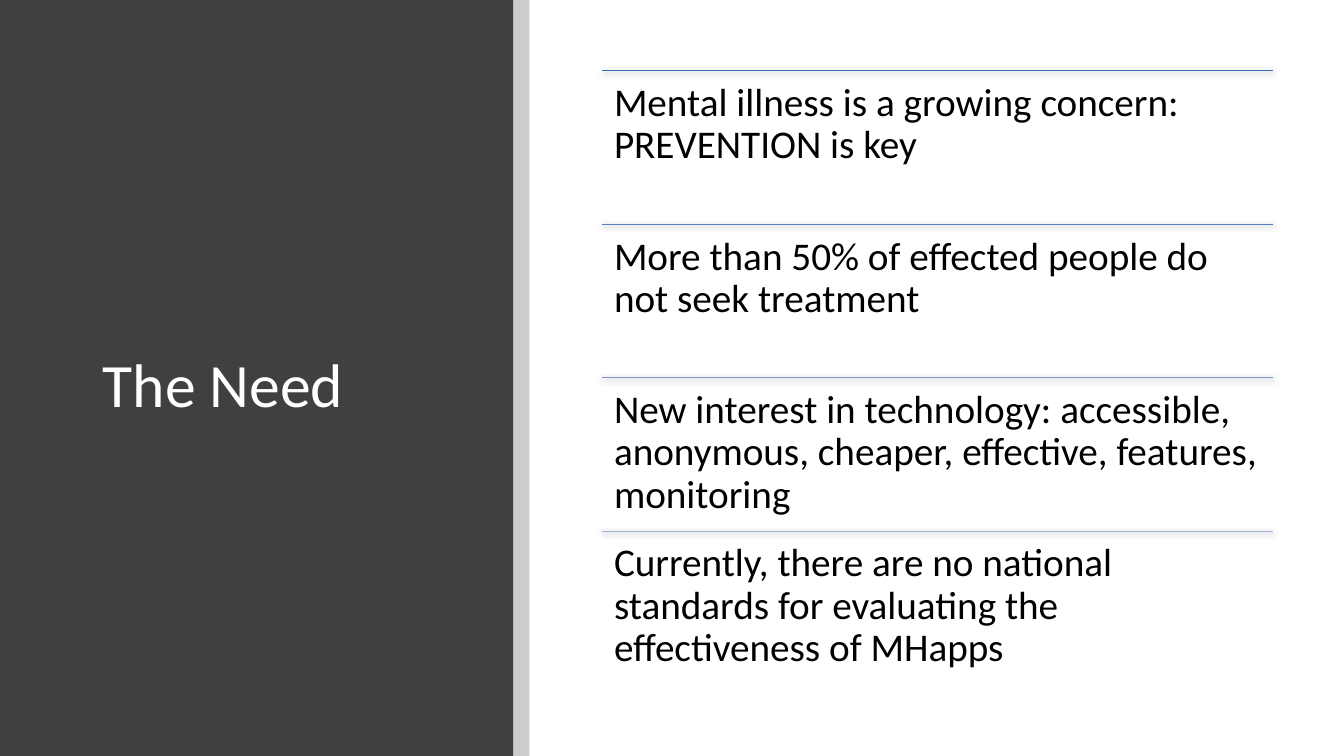
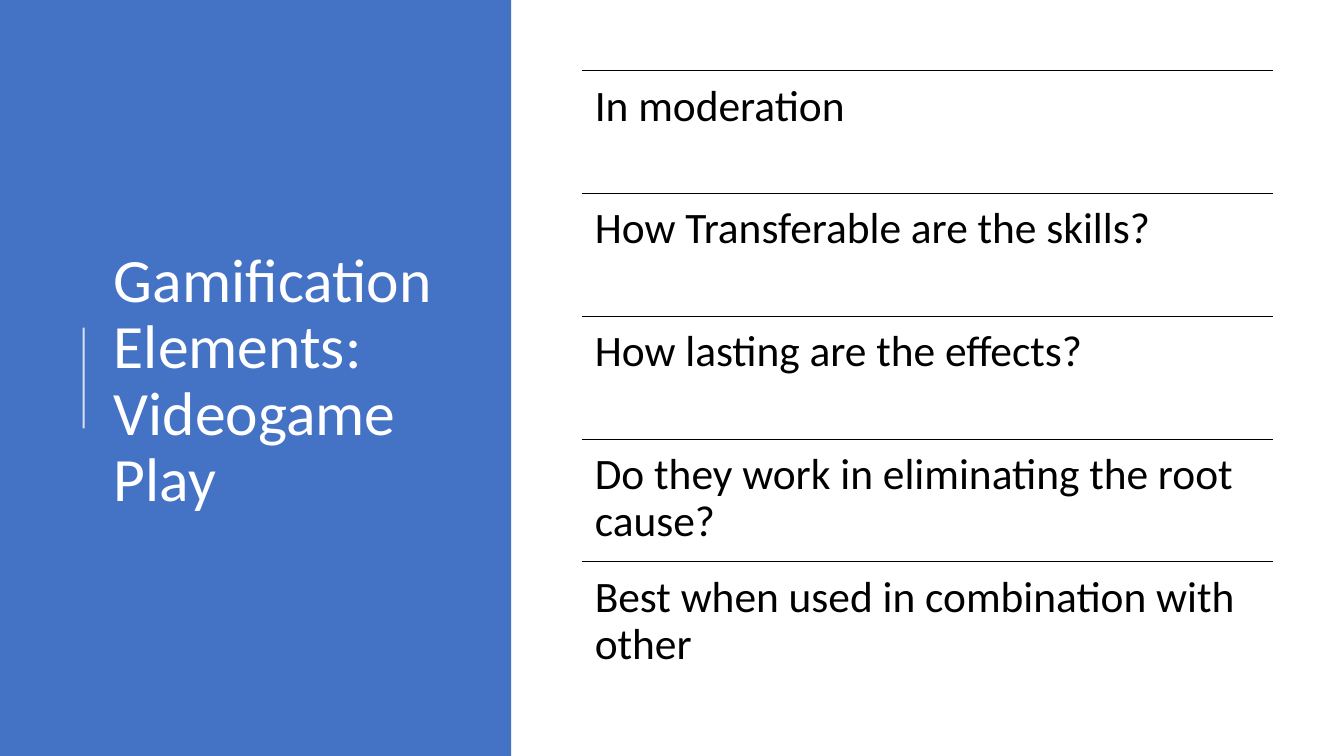
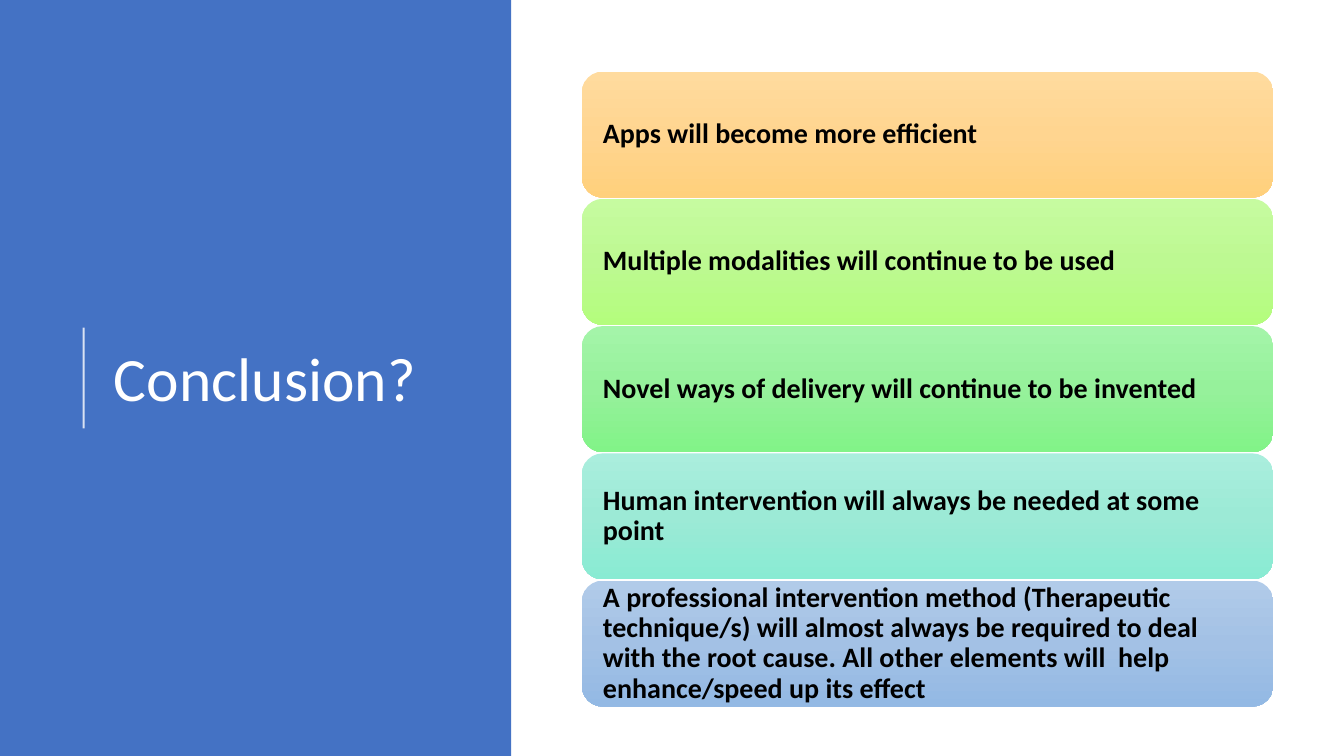
from lxml.etree import SubElement as Sub
from pptx import Presentation
from pptx.dml.color import RGBColor as RGB
from pptx.enum.shapes import MSO_CONNECTOR as LINK, MSO_SHAPE as SHAPE
from pptx.enum.text import MSO_ANCHOR as ANCHOR, MSO_AUTO_SIZE as FIT, PP_ALIGN as ALIGN
from pptx.oxml.ns import qn
from pptx.util import Inches, Pt

INK = {"dark": "404040", "blue": "4472C4", "black": "000000", "white": "FFFFFF"}
FONT = "Calibri"

deck = Presentation()
deck.slide_width, deck.slide_height = Inches(13.33), Inches(7.5)
W, H = deck.slide_width, deck.slide_height
RIGHT = Inches(12.63)
TOP, FOOT = Inches(0.7), Inches(6.79)

# Each row is its text and the colours of its rule or card
slides = [
    {"title": "The Need", "kind": "shade", "fill": "dark", "band": 5.09,
     "box": (0.92, 0.89, 3.65, 5.91), "left": 5.97, "size": 28, "pad": 0.12,
     "rows": [
         ("Mental illness is a growing concern: PREVENTION is key", "3E67B2"),
         ("More than 50% of effected people do not seek treatment", "5A7CC3"),
         ("New interest in technology: accessible, anonymous, cheaper, "
          "effective, features, monitoring", "7D95CD"),
         ("Currently, there are no national standards for evaluating the "
          "effectiveness of MHapps", "9FAED8")]},
    {"title": "Gamification Elements: Videogame Play", "kind": "plain", "fill": "blue",
     "band": 5.07, "box": (1.03, 0.78, 3.69, 6.02), "left": 5.77, "size": 31, "pad": 0.13,
     "rows": [(text, INK["black"]) for text in (
         "In moderation",
         "How Transferable are the skills?",
         "How lasting are the effects?",
         "Do they work in eliminating the root cause?",
         "Best when used in combination with other")]},
    {"title": "Conclusion?", "kind": "card", "fill": "blue", "band": 5.07,
     "box": (1.03, 0.78, 3.69, 6.02), "left": 5.77, "size": 20, "pad": 0.15,
     "rows": [
         ("Apps will become more efficient", ("FFDB9E", "FFD590", "FFD07C")),
         ("Multiple modalities will continue to be used", ("C6FBA0", "BDF992", "B4FD7D")),
         ("Novel ways of delivery will continue to be invented",
          ("A4F4A9", "96F19B", "82F388")),
         ("Human intervention will always be needed at some point",
          ("AAEEDD", "9CEAD6", "89EBD3")),
         ("A professional intervention method (Therapeutic technique/s) will almost "
          "always be required to deal with the root cause. All other elements will  help "
          "enhance/speed up its effect", ("B1CBE9", "A3C1E5", "93B9E4"))]},
]


def write(frame, text, size, ink, anchor, bold=False):
    frame.text = text
    frame.word_wrap = True
    frame.auto_size = FIT.NONE
    frame.vertical_anchor = anchor
    para = frame.paragraphs[0]
    para.alignment = ALIGN.LEFT
    para.line_spacing = 0.9
    font = para.runs[0].font
    font.name, font.size, font.bold = FONT, Pt(size), bold
    font.color.rgb = RGB.from_string(INK[ink])


def rule(page, start, end, ink, width):
    line = page.shapes.add_connector(LINK.STRAIGHT, *start, *end)
    line.line.color.rgb = RGB.from_string(ink)
    line.line.width = Pt(width)
    return line, Sub(line._element.spPr, qn("a:effectLst"))


for plan in slides:
    page = deck.slides.add_slide(deck.slide_layouts[5])
    kind, pad = plan["kind"], Inches(plan["pad"])

    # Side band, with a grey strip or a thin mark
    edge = Inches(plan["band"])
    parts = [(0, edge, INK[plan["fill"]])]
    if kind == "shade":
        parts.append((edge, Inches(0.16), INK["black"]))
    for x, wide, ink in parts:
        band = page.shapes.add_shape(SHAPE.RECTANGLE, x, 0, wide, H)
        band.shadow.inherit = False
        band.fill.solid()
        band.fill.fore_color.rgb = RGB.from_string(ink)
        band.line.fill.background()
    faint, share = band, 20
    if kind != "shade":
        x = Inches(0.83)
        faint, _ = rule(page, (x, Inches(4.25)), (x, Inches(3.25)), INK["white"], 1.5)
        share = 80
    tint = next(faint._element.spPr.iter(qn("a:srgbClr")))
    Sub(tint, qn("a:alpha"), val=str(share * 1000))

    # Title, brought in front of the band
    title = page.shapes.title
    title.left, title.top, title.width, title.height = map(Inches, plan["box"])
    write(title.text_frame, plan["title"], 44, "white", ANCHOR.MIDDLE)
    page.shapes._spTree.append(title._element)

    # Rows of the list
    left = Inches(plan["left"])
    wide = RIGHT - left
    step = (FOOT - TOP) // len(plan["rows"])
    for i, (text, ink) in enumerate(plan["rows"]):
        if kind == "card":
            # Rounded card with a three-stop vertical gradient
            y = Inches(0.71 + 1.2625 * i)
            item = page.shapes.add_shape(SHAPE.ROUNDED_RECTANGLE, left, y, wide, Inches(1.25))
            item.shadow.inherit = False
            item.line.fill.background()
            item.fill.gradient()
            item.fill.gradient_angle = 270
            stops = next(item._element.spPr.iter(qn("a:gsLst")))
            for old in list(stops):
                stops.remove(old)
            for place, shade in zip((0, 50000, 100000), ink):
                stop = Sub(stops, qn("a:gs"), pos=str(place))
                Sub(stop, qn("a:srgbClr"), val=shade)
        else:
            # Rule with its text below
            y = TOP + step * i
            _, glow = rule(page, (left, y), (RIGHT, y), ink, 0.5)
            if kind == "shade":
                cast = Sub(glow, qn("a:outerShdw"), blurRad=str(Pt(4.5)), dist=str(Pt(1.5)),
                           dir="5400000", algn="ctr", rotWithShape="0")
                tone = Sub(cast, qn("a:srgbClr"), val=INK["black"])
                Sub(tone, qn("a:alpha"), val="63000")
            item = page.shapes.add_textbox(left, y, wide, step)
        frame = item.text_frame
        frame.margin_left = frame.margin_right = pad
        frame.margin_top = frame.margin_bottom = 0 if kind == "card" else pad
        anchor = ANCHOR.MIDDLE if kind == "card" else ANCHOR.TOP
        write(frame, text, plan["size"], "black", anchor, kind == "card")

deck.save("out.pptx")
